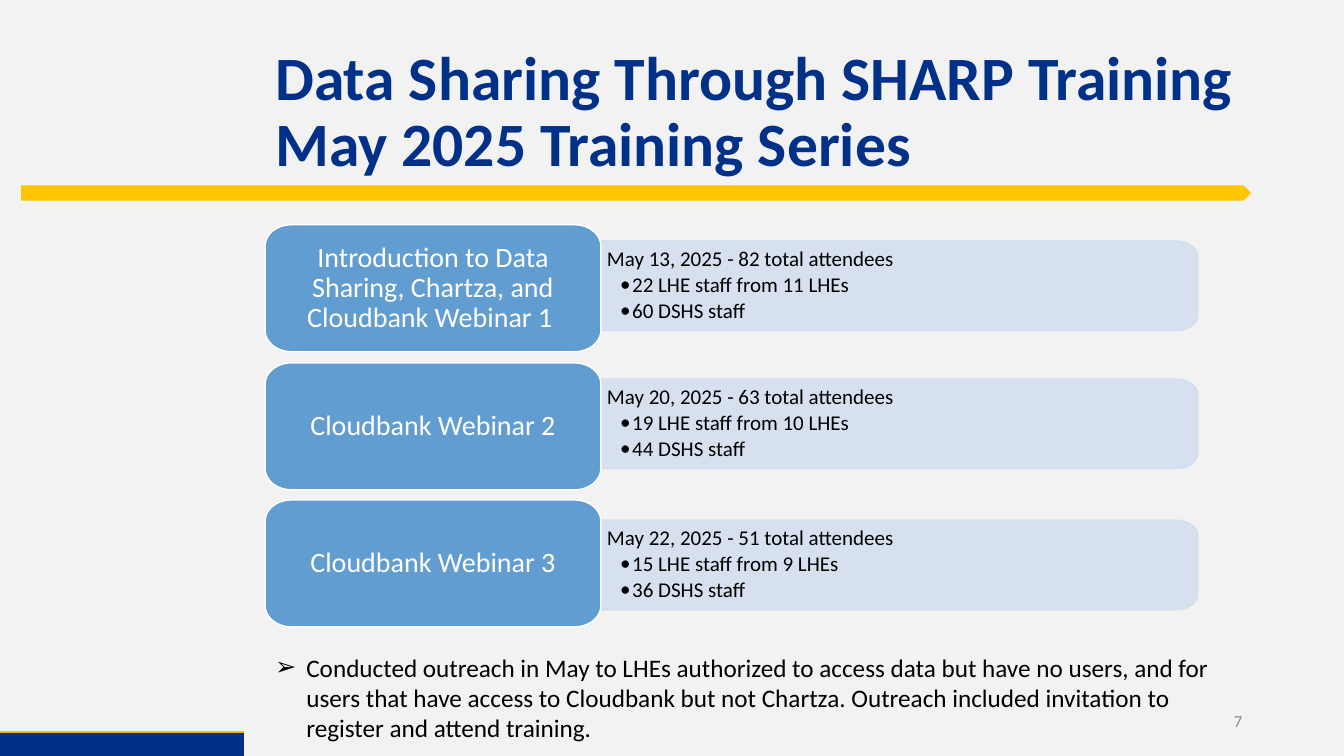
"""Build the slide on the May 2025 data sharing training series."""
from lxml.etree import SubElement
from pptx import Presentation
from pptx.dml.color import RGBColor
from pptx.enum.shapes import MSO_CONNECTOR, MSO_SHAPE
from pptx.enum.text import MSO_ANCHOR, MSO_AUTO_SIZE, PP_ALIGN
from pptx.oxml.ns import qn
from pptx.util import Inches, Pt

WIDTH, HEIGHT = 13.33, 7.5
NAVY, GOLD, BLUE, PALE = "003087", "FFC600", "629DD1", "D3DFEE"
BLACK, WHITE, GRAY, BACKGROUND = "000000", "FFFFFF", "8C8C8C", "F2F2F2"
FONT = "Calibri"

TITLE = "Data Sharing Through SHARP Training May 2025 Training Series"
WEBINARS = [
    (2.23, 2.39, "Introduction to Data Sharing, Chartza, and Cloudbank Webinar 1 ",
     "May 13, 2025 - 82 total attendees", ["22 LHE staff from 11 LHEs", "60 DSHS staff"]),
    (3.6, 3.76, "Cloudbank Webinar 2",
     "May 20, 2025 - 63 total attendees", ["19 LHE staff from 10 LHEs", "44 DSHS staff"]),
    (4.96, 5.16, "Cloudbank Webinar 3",
     "May 22, 2025 - 51 total attendees", ["15 LHE staff from 9 LHEs", "36 DSHS staff"]),
]
OUTREACH = ("Conducted outreach in May to LHEs authorized to access data but have no users, "
            "and for users that have access to Cloudbank but not Chartza. Outreach included "
            "invitation to register and attend training.")
PAGE = "7"

LEFT, LABEL_WIDTH, LABEL_HEIGHT = 2.63, 3.33, 1.26
BAR_WIDTH, BAR_HEIGHT = 5.92, 0.89
FOOTER_TOP, FOOTER_WIDTH = 7.27, 2.42
CURVE = 0.45


def color(value):
    return RGBColor.from_string(value)


def paint(shape, fill, line=None):
    shape.shadow.inherit = False
    shape.fill.solid()
    shape.fill.fore_color.rgb = color(fill)
    if line:
        shape.line.color.rgb = color(line)
        shape.line.width = Pt(1)
    else:
        shape.line.fill.background()


def set_opacity(shape, percent):
    for element in shape._element.spPr.xpath(".//a:srgbClr"):
        SubElement(element, qn("a:alpha"), val=str(percent * 1000))


def set_frame(frame, anchor=MSO_ANCHOR.MIDDLE, insets=(0.1, 0.05, 0.1, 0.05)):
    frame.word_wrap = True
    frame.auto_size = MSO_AUTO_SIZE.NONE
    frame.vertical_anchor = anchor
    frame.margin_left, frame.margin_top, frame.margin_right, frame.margin_bottom = map(Inches, insets)


def write(paragraph, text, size, ink, bold=False, align=PP_ALIGN.LEFT, spacing=1.0,
          after=0, bullet=None, indent=(0, 0)):
    properties = paragraph._p.get_or_add_pPr()
    if bullet:
        properties.set("marL", str(Inches(indent[0])))
        properties.set("indent", str(Inches(indent[1])))
        SubElement(properties, qn("a:buFont"), typeface=FONT)
        SubElement(properties, qn("a:buChar"), char=bullet)
    paragraph.alignment = align
    paragraph.line_spacing = spacing
    paragraph.space_before = Pt(0)
    paragraph.space_after = Pt(after)
    run = paragraph.add_run()
    run.text = text
    run.font.name, run.font.size, run.font.bold = FONT, Pt(size), bold
    run.font.color.rgb = color(ink)


def add_text(slide, box, text, anchor=MSO_ANCHOR.MIDDLE, **style):
    frame = slide.shapes.add_textbox(*map(Inches, box)).text_frame
    set_frame(frame, anchor)
    write(frame.paragraphs[0], text, **style)


def add_rounded(slide, left, top, width, height, radius_x, radius_y, round_left=True):
    """Outline a box with curved corners, optionally only at its right side."""
    right, bottom = left + width, top + height
    corners = [((right, top), (-radius_x, 0), (0, radius_y)),
               ((right, bottom), (0, -radius_y), (-radius_x, 0))]
    if round_left:
        corners += [((left, bottom), (radius_x, 0), (0, -radius_y)),
                    ((left, top), (0, radius_y), (radius_x, 0))]
    points = [(x + share * dx, y + share * dy)
              for (x, y), entry, leave in corners
              for (dx, dy), share in ((entry, 1), (entry, CURVE), (leave, CURVE), (leave, 1))]
    if not round_left:
        points += [(left, bottom), (left, top)]
    points = [(Inches(x), Inches(y)) for x, y in points]
    builder = slide.shapes.build_freeform(*points[0])
    builder.add_line_segments(points[1:], close=True)
    shape = builder.convert_to_shape()
    segments = shape._element.spPr.xpath(".//a:lnTo")
    for corner in range(len(corners)):
        curve, *others = segments[4 * corner:4 * corner + 3]
        curve.tag = qn("a:cubicBezTo")
        for segment in others:
            curve.append(segment[0])
            segment.getparent().remove(segment)
    return shape


def add_webinar(slide, label_top, bar_top, label, heading, details):
    bar = add_rounded(slide, LEFT + LABEL_WIDTH, bar_top, BAR_WIDTH, BAR_HEIGHT,
                      0.22, 0.15, round_left=False)
    paint(bar, PALE, PALE)
    set_opacity(bar, 90)
    frame = bar.text_frame
    set_frame(frame, insets=(0.06, 0.09, 0.12, 0.09))
    style = dict(size=15, ink=BLACK, spacing=0.9, after=2.25)
    write(frame.paragraphs[0], heading, **style)
    for detail in details:
        write(frame.add_paragraph(), detail, bullet="•", indent=(0.25, -0.12), **style)

    tile = add_rounded(slide, LEFT, label_top, LABEL_WIDTH, LABEL_HEIGHT, 0.26, 0.21)
    paint(tile, BLUE, WHITE)
    set_frame(tile.text_frame, insets=(0.18, 0.13, 0.18, 0.13))
    write(tile.text_frame.paragraphs[0], label, size=20, ink=WHITE,
          align=PP_ALIGN.CENTER, spacing=0.9)


def add_decoration(slide):
    arrow = slide.shapes.add_shape(MSO_SHAPE.PENTAGON, *map(Inches, (0.21, 1.84, 12.2, 0.15)))
    paint(arrow, GOLD)
    edge = slide.shapes.add_connector(
        MSO_CONNECTOR.STRAIGHT, *map(Inches, (0, FOOTER_TOP, FOOTER_WIDTH, FOOTER_TOP)))
    edge.line.color.rgb = color(GOLD)
    edge.line.width = Pt(3)
    SubElement(edge._element.spPr, qn("a:effectLst"))
    footer = slide.shapes.add_shape(
        MSO_SHAPE.RECTANGLE, *map(Inches, (0, FOOTER_TOP, FOOTER_WIDTH, HEIGHT - FOOTER_TOP)))
    paint(footer, NAVY)


def main():
    presentation = Presentation()
    presentation.slide_width, presentation.slide_height = Inches(WIDTH), Inches(HEIGHT)
    slide = presentation.slides.add_slide(presentation.slide_layouts[5])
    slide.background.fill.solid()
    slide.background.fill.fore_color.rgb = color(BACKGROUND)
    add_decoration(slide)

    title = slide.shapes.title
    title.left, title.top, title.width, title.height = map(Inches, (LEFT, 0.4, 9.79, 1.45))
    set_frame(title.text_frame)
    write(title.text_frame.paragraphs[0], TITLE, size=44, ink=NAVY, bold=True, spacing=0.9)

    for webinar in WEBINARS:
        add_webinar(slide, *webinar)
    add_text(slide, (LEFT, 6.42, 9.49, 1.01), OUTREACH, anchor=MSO_ANCHOR.TOP,
             size=18, ink=BLACK, bullet="➢", indent=(0.31, -0.31))
    add_text(slide, (9.42, 6.95, 3, 0.4), PAGE, size=12, ink=GRAY, align=PP_ALIGN.RIGHT, after=6)
    presentation.save("out.pptx")


if __name__ == "__main__":
    main()
